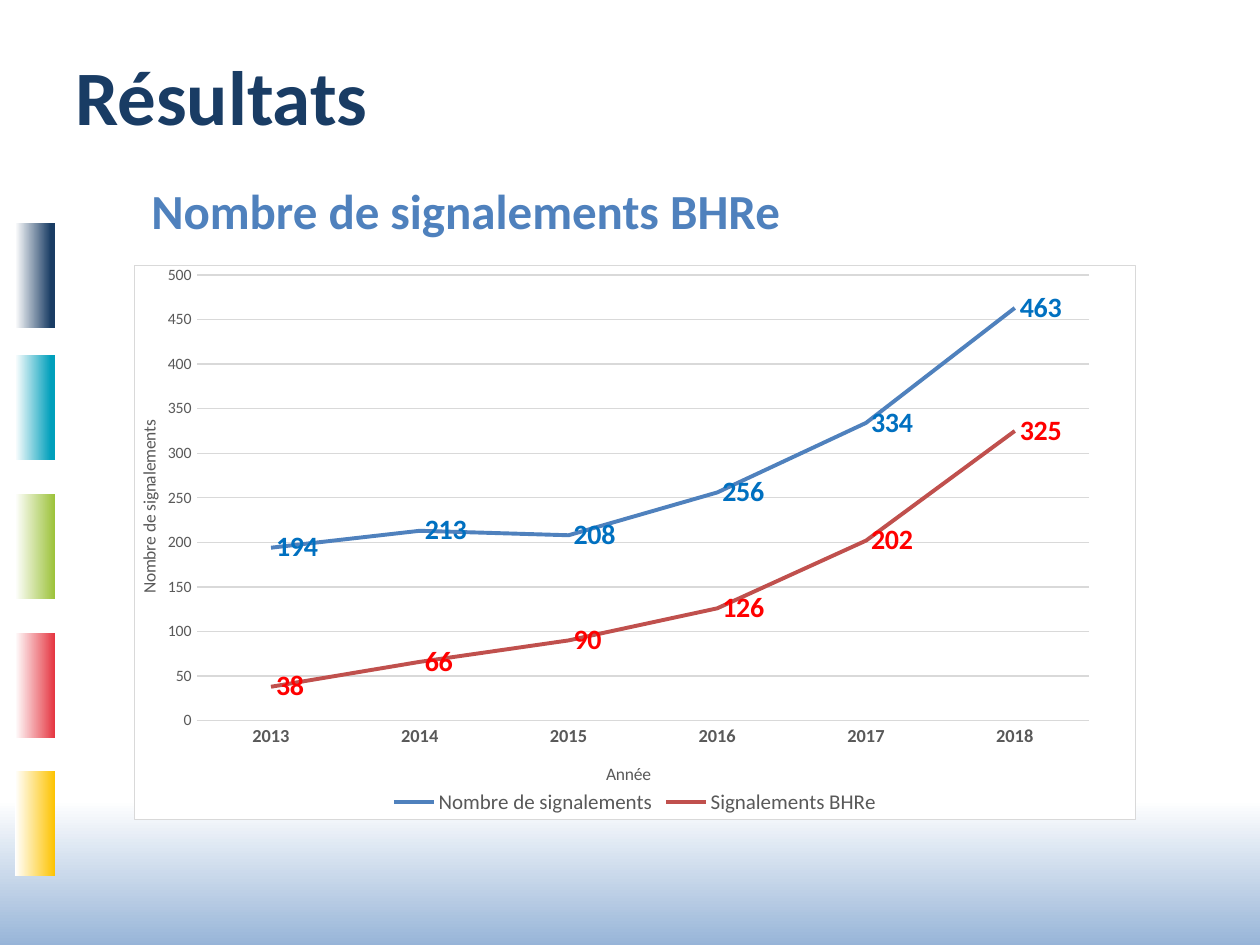
"""Build the results slide: a line chart of yearly reports beside coloured tabs."""
from dataclasses import dataclass
from lxml import etree
from pptx import Presentation
from pptx import util as u
from pptx.chart import data as cd
from pptx.dml.color import RGBColor
from pptx.enum import chart as ch, shapes, text
from pptx.oxml import parse_xml
from pptx.oxml.ns import nsdecls, qn


@dataclass(frozen=True)
class Theme:
    font: str = "Calibri"
    navy: str = "193C64"
    blue: str = "4F81BD"
    sky: str = "95B3D7"
    white: str = "FFFFFF"
    gray: str = "595959"
    rule: str = "D9D9D9"
    title: int = 44
    head: int = 28
    label: int = 16
    legend: int = 12
    cat: float = 10.5
    name: int = 10
    tick: int = 9
    thin: float = 0.75
    line: float = 2.25


T = Theme()
PX = 914400 / 126
SIZE = (1260, 945)
BAND = (0, 800, 1260, 149)
TABS = [
    (223, T.navy, 0.1),
    (355, "009FBB", 0.1),
    (633, "E53540", 0),
    (494, "9CC239", 0),
    (771, "FDC300", 0),
]
TAB_X, TAB_W, TAB_H = 15, 40, 105
TEXTS = [
    ("Résultats", (63, 16, 1134, 157), T.title, T.navy, text.MSO_ANCHOR.MIDDLE),
    ("Nombre de signalements BHRe", (139, 174, 998, 72), T.head, T.blue, text.MSO_ANCHOR.TOP),
]
CHART = (134, 265, 1002, 555)
PLOT = {"x": 0.062, "y": 0.017, "w": 0.892, "h": 0.805}
YEARS = ["2013", "2014", "2015", "2016", "2017", "2018"]
SERIES = [
    ("Nombre de signalements", [194, 213, 208, 256, 334, 463], T.blue, "0070C0"),
    ("Signalements BHRe", [38, 66, 90, 126, 202, 325], "C0504D", "FF0000"),
]


def px(*vals):
    return [u.Emu(round(v * PX)) for v in vals]


def rgb(hue):
    return RGBColor.from_string(hue)


def style(font, size, hue, bold=False):
    font.name, font.size, font.bold = T.font, u.Pt(size), bold
    font.color.rgb = rgb(hue)


def stroke(line, hue, width):
    line.color.rgb = rgb(hue)
    line.width = u.Pt(width)


def add_fade(slide, box, hue, turn, start=0):
    rect = slide.shapes.add_shape(shapes.MSO_SHAPE.RECTANGLE, *px(*box))
    rect.shadow.inherit = False
    rect.rotation = turn
    rect.line.fill.background()
    rect.fill.gradient()
    rect.fill.gradient_angle = 270
    for stop, tint, pos in zip(rect.fill.gradient_stops, (hue, T.white), (start, 1)):
        stop.color.rgb = rgb(tint)
        stop.position = pos


def add_text(slide, words, box, size, hue, anchor):
    frame = slide.shapes.add_textbox(*px(*box)).text_frame
    frame.word_wrap = True
    frame.vertical_anchor = anchor
    run = frame.paragraphs[0].add_run()
    run.text = words
    style(run.font, size, hue, True)


def set_axis(axis, name, size, bold):
    axis.major_tick_mark = axis.minor_tick_mark = ch.XL_TICK_MARK.NONE
    style(axis.tick_labels.font, size, T.gray, bold)
    run = axis.axis_title.text_frame.paragraphs[0].add_run()
    run.text = name
    style(run.font, T.name, T.gray)


def set_frame(chart):
    space = chart._chartSpace
    plot = space.chart.plotArea
    for old in plot.findall(qn("c:layout")):
        plot.remove(old)
    layout = etree.Element(qn("c:layout"))
    manual = etree.SubElement(layout, qn("c:manualLayout"))
    rules = {"layoutTarget": "inner", "xMode": "edge", "yMode": "edge", **PLOT}
    for tag, val in rules.items():
        etree.SubElement(manual, qn(f"c:{tag}")).set("val", str(val))
    plot.insert(0, layout)
    space.chart.addnext(parse_xml(
        f'<c:spPr {nsdecls("c", "a")}>'
        f'<a:solidFill><a:srgbClr val="{T.white}"/></a:solidFill>'
        f'<a:ln w="{u.Pt(T.thin)}"><a:solidFill><a:srgbClr val="{T.rule}"/></a:solidFill></a:ln>'
        '</c:spPr>'))


def add_graph(slide):
    data = cd.CategoryChartData()
    data.categories = YEARS
    for name, vals, *_ in SERIES:
        data.add_series(name, vals)
    chart = slide.shapes.add_chart(ch.XL_CHART_TYPE.LINE, *px(*CHART), data).chart
    chart.has_title = False
    chart.font.name, chart.font.size = T.font, u.Pt(T.name)
    chart.has_legend = True
    chart.legend.position = ch.XL_LEGEND_POSITION.BOTTOM
    chart.legend.include_in_layout = False
    style(chart.legend.font, T.legend, T.gray)
    years, count = chart.category_axis, chart.value_axis
    set_axis(years, "Année", T.cat, True)
    set_axis(count, "Nombre de signalements", T.tick, False)
    stroke(years.format.line, T.rule, T.thin)
    count.format.line.fill.background()
    stroke(count.major_gridlines.format.line, T.rule, T.thin)
    count.minimum_scale, count.maximum_scale, count.major_unit = 0, 500, 50
    chart.plots[0].vary_by_categories = False
    for line, (*_, hue, ink) in zip(chart.plots[0].series, SERIES):
        line.smooth = False
        stroke(line.format.line, hue, T.line)
        labels = line.data_labels
        labels.show_value = True
        labels.position = ch.XL_LABEL_POSITION.RIGHT
        style(labels.font, T.label, ink, True)
    set_frame(chart)


def main():
    deck = Presentation()
    deck.slide_width, deck.slide_height = px(*SIZE)
    slide = deck.slides.add_slide(deck.slide_layouts[6])
    add_fade(slide, BAND, T.sky, 180)
    shift = (TAB_H - TAB_W) / 2
    for top, hue, start in TABS:
        add_fade(slide, (TAB_X - shift, top + shift, TAB_H, TAB_W), hue, 90, start)
    for item in TEXTS:
        add_text(slide, *item)
    add_graph(slide)
    deck.save("out.pptx")


if __name__ == "__main__":
    main()
